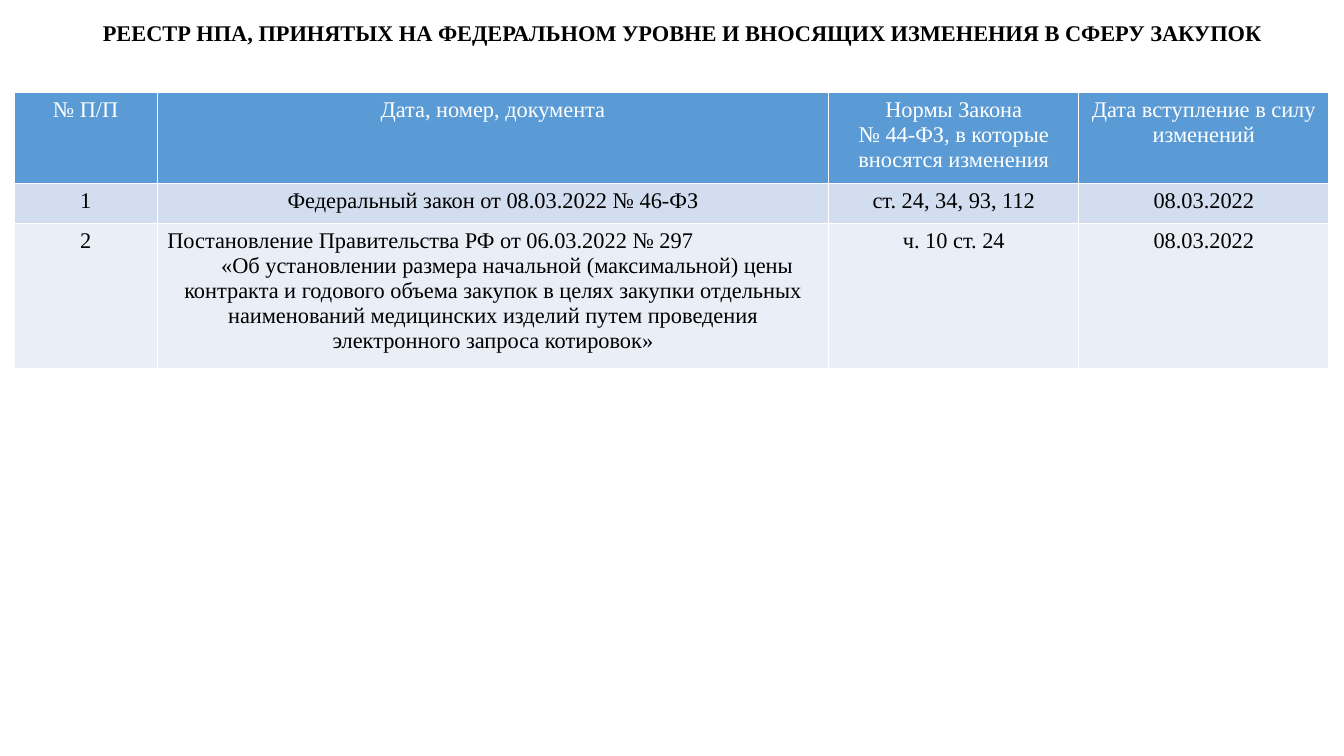
from lxml.etree import SubElement
from pptx import Presentation
from pptx.dml.color import RGBColor
from pptx.enum.text import MSO_ANCHOR as Anchor, PP_ALIGN as Align
from pptx.oxml.ns import qn
from pptx.util import Inches, Pt

COLORS = {
    "header": "5B9BD5",
    "odd": "D2DEEF",
    "even": "EAEFF7",
    "white": "FFFFFF",
    "black": "000000",
}
FONT = {"name": "Times New Roman", "size": Pt(16)}

TITLE = "РЕЕСТР НПА, ПРИНЯТЫХ НА ФЕДЕРАЛЬНОМ УРОВНЕ И ВНОСЯЩИХ ИЗМЕНЕНИЯ В СФЕРУ ЗАКУПОК"
COLUMN_WIDTHS = [1.42, 6.66, 2.48, 2.48]
ROW_HEIGHTS = [0.84, 0.4, 1.34]
# Each cell is a list of paragraphs
ROWS = [
    [
        ["№ П/П"],
        ["Дата, номер, документа"],
        ["Нормы Закона", "№ 44-ФЗ, в которые вносятся изменения"],
        ["Дата вступление в силу изменений"],
    ],
    [
        ["1"],
        ["Федеральный закон от 08.03.2022 № 46-ФЗ"],
        ["ст. 24, 34, 93, 112"],
        ["08.03.2022"],
    ],
    [
        ["2"],
        [
            "Постановление Правительства РФ от 06.03.2022 № 297",
            "«Об установлении размера начальной (максимальной) цены контракта "
            "и годового объема закупок в целях закупки отдельных наименований "
            "медицинских изделий путем проведения электронного запроса котировок»",
        ],
        ["ч. 10 ст. 24"],
        ["08.03.2022"],
    ],
]


def write_text(frame, lines, color, bold=False):
    for index, line in enumerate(lines):
        para = frame.paragraphs[0] if index == 0 else frame.add_paragraph()
        para.alignment = Align.CENTER
        span = para.add_run()
        span.text = line
        for key, value in {**FONT, "bold": bold}.items():
            setattr(span.font, key, value)
        span.font.color.rgb = RGBColor.from_string(COLORS[color])


def add_title(page):
    box = page.shapes.add_textbox(Inches(0.36), Inches(0.08), Inches(12.82), Inches(0.43))
    frame = box.text_frame
    for key, value in {"word_wrap": True, "vertical_anchor": Anchor.BOTTOM}.items():
        setattr(frame, key, value)
    write_text(frame, [TITLE], "black", bold=True)
    frame.paragraphs[0].line_spacing = 0.9


def add_borders(cell):
    properties = cell._tc.get_or_add_tcPr()
    for side in ("lnL", "lnR", "lnT", "lnB"):
        line = SubElement(properties, qn(f"a:{side}"), w=str(Pt(1)))
        fill = SubElement(line, qn("a:solidFill"))
        SubElement(fill, qn("a:srgbClr"), val=COLORS["white"])


def fill_cell(cell, lines, fill, color):
    add_borders(cell)
    cell.fill.solid()
    cell.fill.fore_color.rgb = RGBColor.from_string(COLORS[fill])
    write_text(cell.text_frame, lines, color)


def add_register(page):
    table = page.shapes.add_table(
        len(ROWS), len(COLUMN_WIDTHS), Inches(0.14), Inches(0.92),
        Inches(sum(COLUMN_WIDTHS)), Inches(sum(ROW_HEIGHTS)),
    ).table
    for column, width in zip(table.columns, COLUMN_WIDTHS):
        column.width = Inches(width)
    for row, height in zip(table.rows, ROW_HEIGHTS):
        row.height = Inches(height)

    # Header row, then alternating bands
    for row_index, row in enumerate(ROWS):
        if row_index == 0:
            fill, color = "header", "white"
        else:
            fill, color = ("odd" if row_index % 2 else "even"), "black"
        for column_index, lines in enumerate(row):
            fill_cell(table.cell(row_index, column_index), lines, fill, color)

    # Document name to the left, its subject indented below
    name, subject = table.cell(2, 1).text_frame.paragraphs
    name.alignment = Align.LEFT
    subject._p.get_or_add_pPr().set("indent", str(Inches(0.28)))


def main():
    deck = Presentation()
    deck.slide_width, deck.slide_height = Inches(13.33), Inches(7.5)
    page = deck.slides.add_slide(deck.slide_layouts[6])
    add_title(page)
    add_register(page)
    deck.save("out.pptx")


if __name__ == "__main__":
    main()
